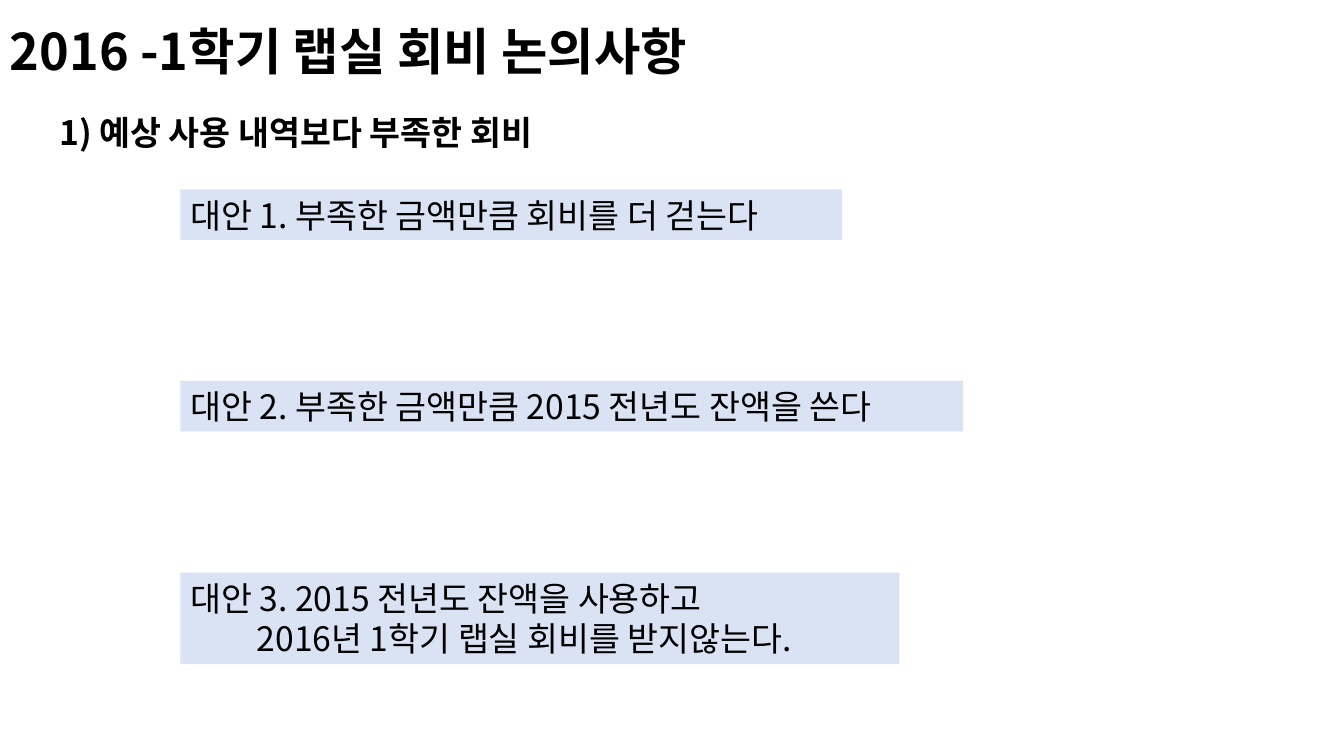
from lxml.etree import SubElement as Sub
from pptx import Presentation
from pptx.dml.color import RGBColor
from pptx.enum.text import MSO_ANCHOR as Anchor
from pptx.oxml.ns import qn
from pptx.util import Pt

PX = 9144
FONT = "Noto Sans CJK KR"
BLACK = RGBColor(0x00, 0x00, 0x00)
BLUE = RGBColor(0xDA, 0xE3, 0xF3)

deck = Presentation()
deck.slide_width, deck.slide_height = 1333 * PX, 750 * PX
slide = deck.slides.add_slide(deck.slide_layouts[6])


def add_text(left, top, width, height, lines, size=24, bold=False):
    box = slide.shapes.add_textbox(left * PX, top * PX, width * PX, height * PX)
    frame = box.text_frame
    frame.word_wrap = True
    frame.text = "\n".join(lines)
    for para in frame.paragraphs:
        font = para.font
        font.size, font.bold, font.name = Pt(size), bold, FONT
        font.color.rgb = BLACK
        props = para._p.get_or_add_pPr().find(qn("a:defRPr"))
        Sub(props, qn("a:ea"), typeface=FONT)
    return box


title = add_text(0, 0, 835, 108, ["2016 -1학기 랩실 회비 논의사항"], 36, True)
title.text_frame.vertical_anchor = Anchor.MIDDLE
title.text_frame.paragraphs[0].line_spacing = 0.9

add_text(49, 106, 561, 50, ["1) 예상 사용 내역보다 부족한 회비"], bold=True)

plans = [
    (656, 50, ["대안 1. 부족한 금액만큼 회비를 더 걷는다"]),
    (776, 50, ["대안 2. 부족한 금액만큼 2015 전년도 잔액을 쓴다"]),
    (713, 91, ["대안 3. 2015 전년도 잔액을 사용하고",
               "2016년 1학기 랩실 회비를 받지않는다."]),
]
for row, (width, height, lines) in enumerate(plans):
    box = add_text(179, 188 + 190 * row, width, height, lines)
    box.fill.solid()
    box.fill.fore_color.rgb = BLUE
    for para in box.text_frame.paragraphs[1:]:
        para._p.get_or_add_pPr().set("marL", str(66 * PX))

deck.save("out.pptx")
